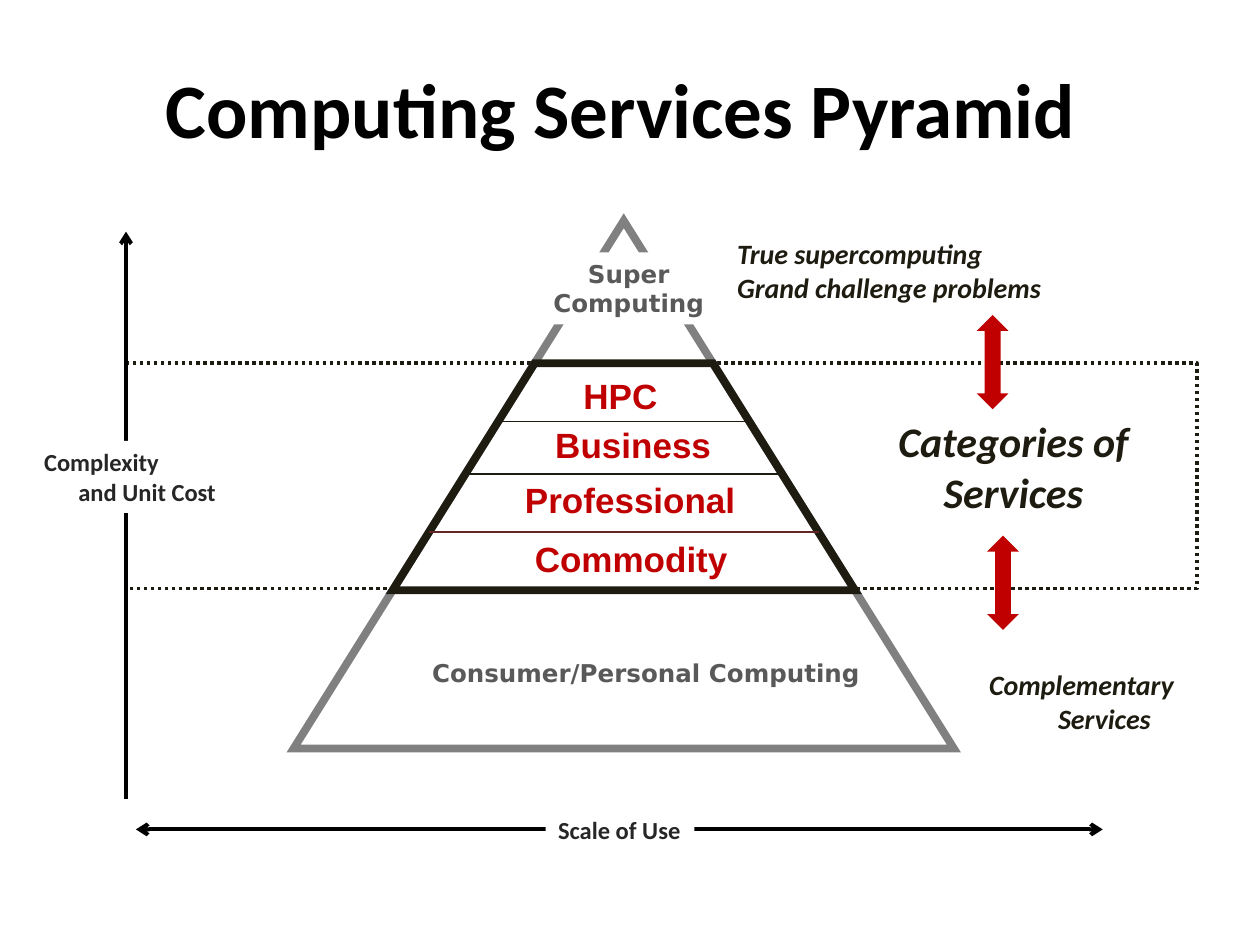
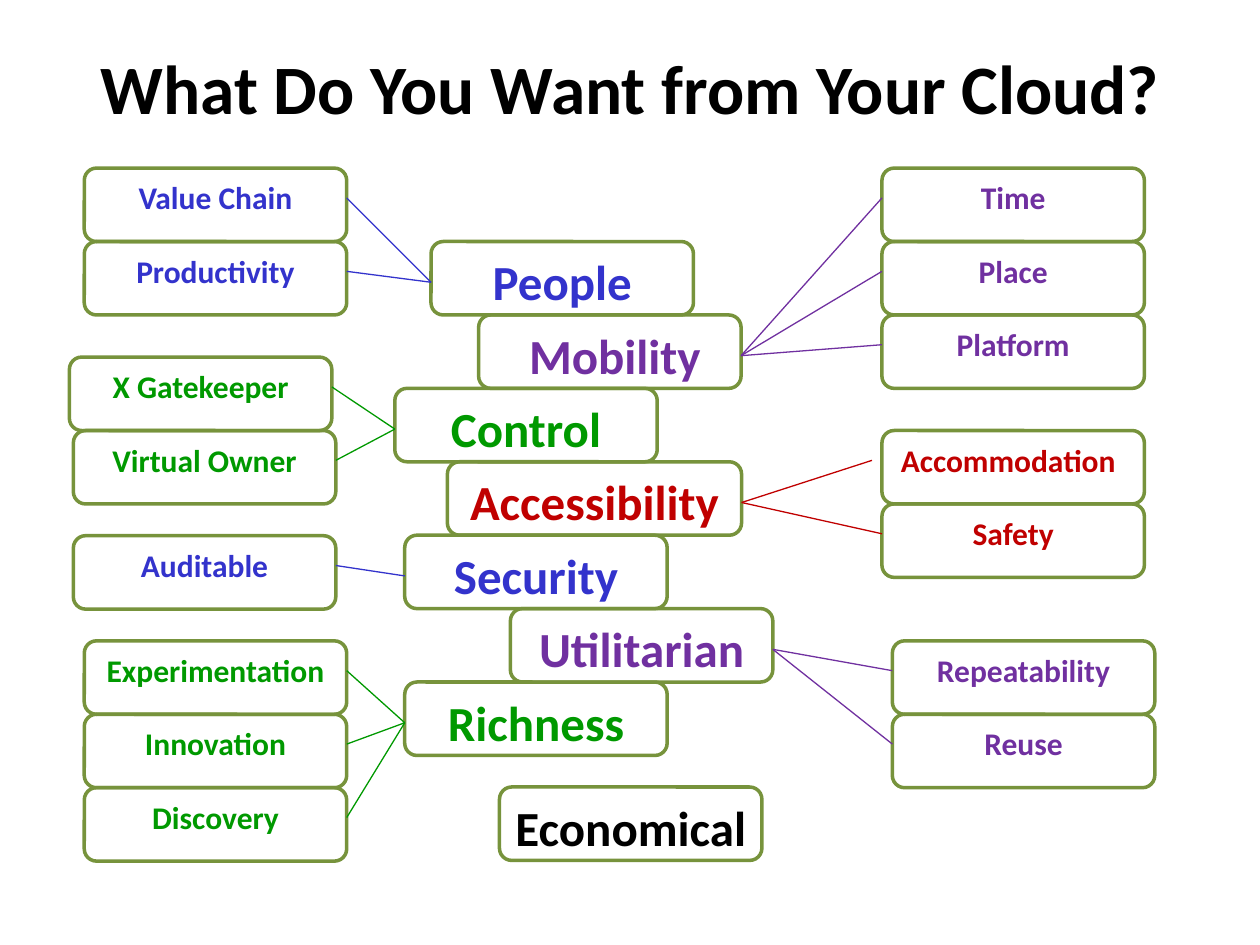
from lxml import etree
from pptx import Presentation
from pptx.dml.color import RGBColor
from pptx.enum.dml import MSO_LINE
from pptx.enum.shapes import MSO_CONNECTOR, MSO_SHAPE
from pptx.enum.text import MSO_ANCHOR, PP_ALIGN
from pptx.oxml.ns import qn
from pptx.util import Cm, Pt

BLACK = RGBColor(0, 0, 0)
WHITE = RGBColor(255, 255, 255)
COAL = RGBColor(0x1E, 0x1C, 0x11)
DARK = RGBColor(0x26, 0x26, 0x26)
SLATE = RGBColor(0x59, 0x59, 0x59)
GRAY = RGBColor(0x80, 0x80, 0x80)
RED = RGBColor(0xC0, 0, 0)
MAROON = RGBColor(0x63, 0x25, 0x23)
OLIVE = RGBColor(0x77, 0x93, 0x3C)
BLUE = RGBColor(0x33, 0x33, 0xCC)
PURPLE = RGBColor(0x70, 0x30, 0xA0)
GREEN = RGBColor(0, 0x99, 0)

LEFT, CENTER = PP_ALIGN.LEFT, PP_ALIGN.CENTER
TOP, MIDDLE = MSO_ANCHOR.TOP, MSO_ANCHOR.MIDDLE
RECT, ROUND = MSO_SHAPE.RECTANGLE, MSO_SHAPE.ROUNDED_RECTANGLE
PEAK, ARROW = MSO_SHAPE.ISOSCELES_TRIANGLE, MSO_SHAPE.UP_DOWN_ARROW
DOTS = MSO_LINE.ROUND_DOT
STRAIGHT = MSO_CONNECTOR.STRAIGHT

SANS, ARIAL, DEJAVU = "Calibri", "Arial", "DejaVu Sans"
ROW = 1.48
WIDTH = 5.29


def add_text(slide, box, lines, size, ink, font=SANS, align=CENTER,
             anchor=TOP, italic=False, fill=None, indent=0):
    shape = slide.shapes.add_textbox(*map(Cm, box))
    if fill is not None:
        shape.fill.solid()
        shape.fill.fore_color.rgb = fill
    frame = shape.text_frame
    frame.word_wrap = True
    frame.vertical_anchor = anchor
    if align == LEFT:
        frame.margin_right = 0
    frame.text = "\n".join(lines)
    for part in frame.paragraphs:
        part.alignment = align
        part.font.name = font
        part.font.size = Pt(size)
        part.font.bold = True
        part.font.italic = italic
        part.font.color.rgb = ink
    if indent:
        last = frame.paragraphs[-1]._p.get_or_add_pPr()
        last.set("marL", str(Cm(indent)))
        last.set("indent", "0")


def add_title(slide, box, text, size):
    add_text(slide, box, [text], size, BLACK, anchor=MIDDLE)


def outline(shape, ink, width, sharp=False):
    shape.shadow.inherit = False
    shape.fill.background()
    shape.line.color.rgb = ink
    shape.line.width = Pt(width)
    if sharp:
        miter = etree.SubElement(shape.line._get_or_add_ln(), qn("a:miter"))
        miter.set("lim", "800000")


def add_line(slide, start, end, ink, width=0.75, heads=()):
    line = slide.shapes.add_connector(STRAIGHT, *map(Cm, (*start, *end)))
    line.line.color.rgb = ink
    line.line.width = Pt(width)
    for head in heads:
        tip = etree.SubElement(line.line._get_or_add_ln(), qn(head))
        tip.set("type", "arrow")
    etree.SubElement(line._element.spPr, qn("a:effectLst"))


def draw_band(slide, x, y, w, h):
    band = slide.shapes.add_shape(RECT, *map(Cm, (x, y, w, h)))
    outline(band, COAL, 2)
    band.line.dash_style = DOTS


def draw_peak(slide, x, y, w, h):
    mid = x + w / 2

    def ends(part):
        half = part * w / 2
        level = y + part * h
        return (mid - half, level), (mid + half, level)

    peak = slide.shapes.add_shape(PEAK, *map(Cm, (x, y, w, h)))
    outline(peak, GRAY, 4.5, sharp=True)

    upper, lower = ends(0.27), ends(0.7)
    points = [tuple(map(Cm, p)) for p in (lower[0], *upper, lower[1])]
    builder = slide.shapes.build_freeform(*points[0])
    builder.add_line_segments(points[1:], close=True)
    outline(builder.convert_to_shape(), COAL, 4.5, sharp=True)

    for part, ink in ((0.38, COAL), (0.48, COAL), (0.59, MAROON)):
        add_line(slide, *ends(part), ink)

    add_text(slide, (x + 2.54, y + 8.69, 9.32, 0.86),
             ["Consumer/Personal Computing"], 14, SLATE, DEJAVU, LEFT)
    add_text(slide, (mid - 1.78, y + 0.64, 3.76, 1.45),
             ["Super", "Computing"], 14, SLATE, DEJAVU, fill=WHITE)
    layers = (("HPC ", 2.97, 0.03), ("Business", 3.96, 0.19),
              ("Professional", 5.08, 0.13), ("Commodity", 6.27, 0.15))
    for word, drop, shift in layers:
        add_text(slide, (mid - 2.7 + shift, y + drop, 5.4, 1.12),
                 [word], 20, RED, ARIAL)


def draw_axes(slide, x, y, w, h):
    base = y + h + 0.62
    add_line(slide, (x + 0.2, base), (x + w, base), BLACK, 2.25,
             ("a:headEnd", "a:tailEnd"))
    add_text(slide, (x + 8.46, base - 0.41, 3, 0.86),
             ["Scale of Use"], 14, DARK, align=LEFT, fill=WHITE)
    add_line(slide, (x, y + h), (x, y), BLACK, 2.25, ("a:tailEnd",))
    add_text(slide, (x - 1.9, y + 4.22, 3.96, 1.45),
             ["Complexity", "and Unit Cost"], 14, DARK, align=LEFT,
             fill=WHITE, indent=0.69)


def draw_notes(slide, x, y, w):
    add_text(slide, (x + 1.91, y + 3.61, w - 1.91, 2.31),
             ["Categories of Services"], 24, COAL, italic=True)
    add_text(slide, (x, y, w, 1.63),
             ["True supercomputing", "Grand challenge problems"], 16, COAL,
             align=LEFT, italic=True)
    add_text(slide, (x + 5.08, y + 8.69, 4.42, 1.63),
             ["Complementary", "Services"], 16, COAL,
             align=LEFT, italic=True, indent=1.39)
    for left, top in ((5.29, 6.15), (5.08, 1.7)):
        arrow = slide.shapes.add_shape(
            ARROW, *map(Cm, (x + left, y + top, 0.64, 1.9)))
        arrow.shadow.inherit = False
        arrow.fill.solid()
        arrow.fill.fore_color.rgb = RED
        arrow.line.fill.background()


def draw_card(slide, x, y, w, word, size, ink, shift=0):
    card = slide.shapes.add_shape(ROUND, *map(Cm, (x, y, w, ROW)))
    outline(card, OLIVE, 2)
    add_text(slide, (x + shift, y + 0.08, w - shift, ROW - 0.04),
             [word], size, ink)


def draw_theme(slide, box, word, ink, shift=0, top=0, cards=()):
    x, y, w = box
    draw_card(slide, x, y, w, word, 28, ink, shift)
    for row, (name, left, nudge) in enumerate(cards):
        level = top + row * ROW
        draw_card(slide, left, level, WIDTH, name, 18, ink, nudge)
        if left < x:
            start, end = x, left + WIDTH
        else:
            start, end = x + w, left + nudge
        add_line(slide, (start, y + 0.82), (end, level + 0.6), ink)


def draw_themes(slide, x, y):
    right = x + 16.08
    themes = (
        (7.29, 1, WIDTH, "People", BLUE, 0, 0,
         (("Value Chain", x, 0), ("Productivity", x, 0))),
        (8.25, 2, WIDTH, "Mobility", PURPLE, 0.2, 0,
         (("Time", right, 0), ("Place", right, 0), ("Platform", right, 0))),
        (6.56, 3, WIDTH, "Control", GREEN, 0, 3.81,
         (("X Gatekeeper", x - 0.3, 0), ("Virtual Owner", x - 0.22, 0))),
        (7.62, 4, 5.93, "Accessibility", RED, 0, 5.29,
         (("Accommodation", right, -0.2), ("Safety", right, 0))),
        (6.76, 5, WIDTH, "Security", BLUE, 0, 7.41,
         (("Auditable", x - 0.22, 0),)),
        (8.89, 6, WIDTH, "Utilitarian", PURPLE, 0, 9.53,
         (("Repeatability", right + 0.21, 0), ("Reuse", right + 0.21, 0))),
        (6.76, 7, WIDTH, "Richness", GREEN, 0, 9.53,
         (("Experimentation", x, 0), ("Innovation", x, 0),
          ("Discovery", x, 0))),
        (8.67, 8.43, WIDTH, "Economical", BLACK, 0, 0, ()),
    )
    for left, row, w, word, ink, shift, top, cards in themes:
        draw_theme(slide, (x + left - 0.3, y + row * ROW, w), word, ink,
                   shift, y + top, cards)


def main():
    deck = Presentation()
    deck.slide_width, deck.slide_height = Cm(25.4), Cm(19.05)
    blank = deck.slide_layouts[6]

    slide = deck.slides.add_slide(blank)
    add_title(slide, (1.27, 0.76, 22.86, 2.84),
              "Computing Services Pyramid ", 44)
    draw_band(slide, 2.54, 7.32, 21.59, 4.55)
    draw_peak(slide, 5.92, 4.45, 13.31, 10.64)
    draw_notes(slide, 14.61, 4.65, 9.73)
    draw_axes(slide, 2.54, 4.67, 19.69, 11.43)

    slide = deck.slides.add_slide(blank)
    add_title(slide, (1.27, 0.76, 22.86, 1.98),
              "What Do You Want from Your Cloud?", 39.6)
    draw_themes(slide, 1.7, 3.39)

    deck.save("out.pptx")


if __name__ == "__main__":
    main()
